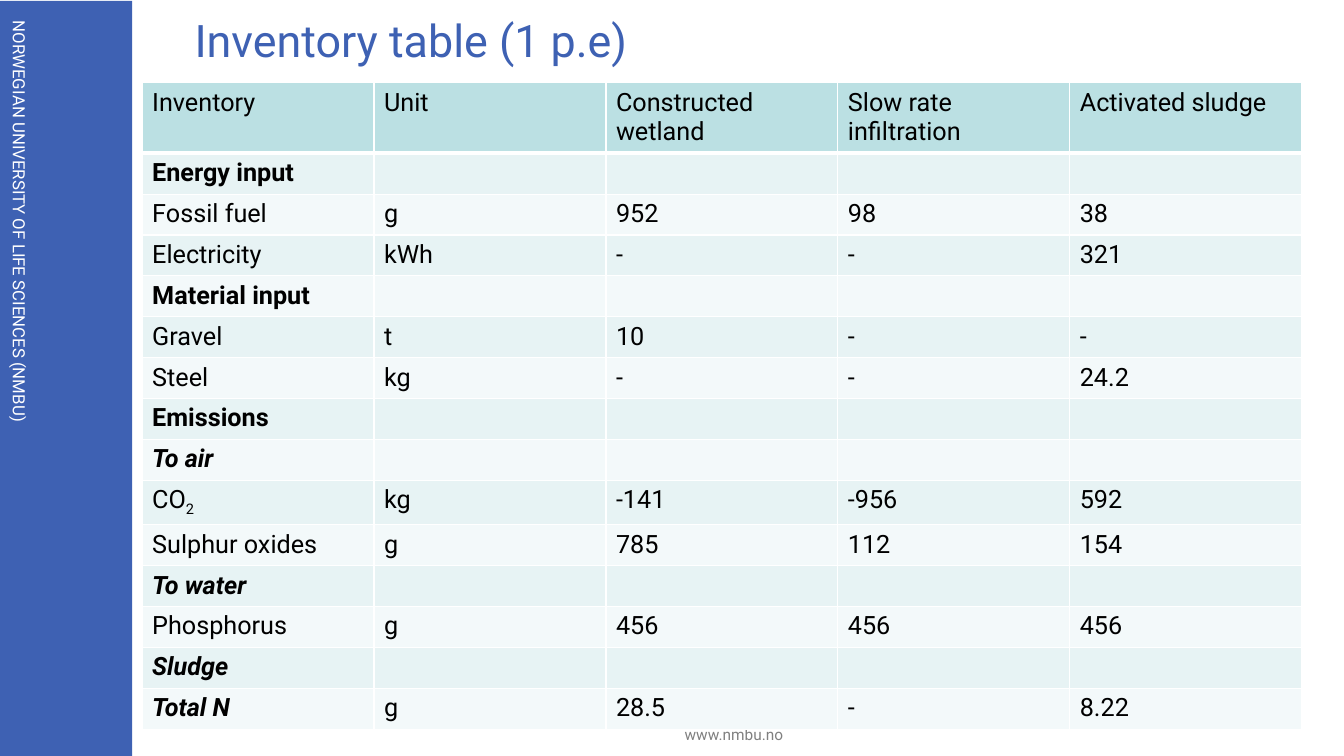
"""Build the inventory table slide."""
from lxml import etree
from pptx import Presentation
from pptx.dml.color import RGBColor
from pptx.enum import shapes, text
from pptx.oxml import ns
from pptx.util import Inches, Pt

FONT = "Roboto"
BLUE, WHITE, GREY, BLACK = "3E61B3", "FFFFFF", "808080", "000000"
HEADER_FILL, BAND_FILLS = "BBE0E3", ("E7F3F4", "F3F9FA")
COLUMN_WIDTH = Inches(2.3)
ROW_HEIGHT = Inches(5.68) // 14
HEADER = ("Inventory", "Unit", "Constructed wetland", "Slow rate infiltration", "Activated sludge")
ROWS = (
    ("Energy input",),
    ("Fossil fuel", "g", "952", "98", "38"),
    ("Electricity", "kWh", "-", "-", "321"),
    ("Material input",),
    ("Gravel", "t", "10", "-", "-"),
    ("Steel", "kg", "-", "-", "24.2"),
    ("Emissions",),
    ("To air",),
    ("CO_2", "kg", "-141", "-956", "592"),
    ("Sulphur oxides", "g", "785", "112", "154"),
    ("To water",),
    ("Phosphorus", "g", "456", "456", "456"),
    ("Sludge",),
    ("Total N", "g", "28.5", "-", "8.22"),
)
BOLD = {"Energy input", "Material input", "Emissions"}
BOLD_ITALIC = {"To air", "To water", "Sludge", "Total N"}


def color(value):
    """Return a colour from a hex string."""
    return RGBColor.from_string(value)


def write(frame, words, size=18, fill=BLACK, bold=False, italic=False, align=text.PP_ALIGN.LEFT):
    """Write formatted text, with what follows an underscore as a subscript."""
    paragraph = frame.paragraphs[0]
    paragraph.alignment = align
    for index, part in enumerate(words.split("_")):
        run = paragraph.add_run()
        run.text = part
        run.font.name = FONT
        run.font.size = Pt(size)
        run.font.bold = bold
        run.font.italic = italic
        run.font.color.rgb = color(fill)
        if index:
            run._r.get_or_add_rPr().set("baseline", "-25000")


def add_title(slide, words):
    """Place and fill the title placeholder."""
    title = slide.shapes.title
    title.left, title.top = Inches(1.83), Inches(0)
    title.width, title.height = Inches(11.5), Inches(0.71)
    frame = title.text_frame
    frame.auto_size = text.MSO_AUTO_SIZE.NONE
    frame.vertical_anchor = text.MSO_ANCHOR.BOTTOM
    write(frame, words, size=32, fill=BLUE)


def add_side_band(slide):
    """Draw the blue band at the left edge."""
    band = slide.shapes.add_shape(
        shapes.MSO_SHAPE.RECTANGLE, Inches(0), Inches(0.01), Inches(1.31), Inches(7.5))
    band.shadow.inherit = False
    band.fill.solid()
    band.fill.fore_color.rgb = color(BLUE)
    band.line.fill.background()


def add_label(slide, words, left, top, width, height, rotation=0, inset=None, **style):
    """Add a text box, optionally rotated and with its own inset."""
    label = slide.shapes.add_textbox(Inches(left), Inches(top), Inches(width), Inches(height))
    label.rotation = rotation
    frame = label.text_frame
    frame.word_wrap = True
    if inset is not None:
        frame.margin_left = frame.margin_right = Inches(inset)
        frame.margin_top = frame.margin_bottom = Inches(inset)
        frame.vertical_anchor = text.MSO_ANCHOR.MIDDLE
    write(frame, words, **style)


def set_borders(cell, bottom=1):
    """Give a cell white borders, 1 point wide except perhaps the bottom."""
    properties = cell._tc.get_or_add_tcPr()
    widths = {"lnL": 1, "lnR": 1, "lnT": 1, "lnB": bottom}
    for index, (side, width) in enumerate(widths.items()):
        line = etree.Element(ns.qn(f"a:{side}"), w=str(Pt(width)))
        solid = etree.SubElement(line, ns.qn("a:solidFill"))
        etree.SubElement(solid, ns.qn("a:srgbClr"), val=WHITE)
        properties.insert(index, line)


def fill_row(table, row, values, fill, bottom=1):
    """Colour one table row and write its values."""
    table.rows[row].height = ROW_HEIGHT
    for column in range(len(HEADER)):
        cell = table.cell(row, column)
        cell.fill.solid()
        cell.fill.fore_color.rgb = color(fill)
        set_borders(cell, bottom)
        if column < len(values):
            words = values[column]
            write(cell.text_frame, words, bold=words in BOLD | BOLD_ITALIC,
                  italic=words in BOLD_ITALIC)


def add_inventory(slide):
    """Add the inventory table with alternating row colours."""
    count = len(ROWS) + 1
    table = slide.shapes.add_table(
        count, len(HEADER), Inches(1.41), Inches(0.82),
        COLUMN_WIDTH * len(HEADER), ROW_HEIGHT * count).table
    for column in table.columns:
        column.width = COLUMN_WIDTH
    fill_row(table, 0, HEADER, HEADER_FILL, bottom=3)
    for index, values in enumerate(ROWS):
        fill_row(table, index + 1, values, BAND_FILLS[index % 2])


def main():
    """Build and save the presentation."""
    presentation = Presentation()
    presentation.slide_width, presentation.slide_height = Inches(13.33), Inches(7.5)
    slide = presentation.slides.add_slide(presentation.slide_layouts[5])
    add_side_band(slide)
    add_label(slide, "NORWEGIAN UNIVERSITY OF LIFE SCIENCES (NMBU)",
              -1.84, 2.14, 4.07, 0.2, rotation=90, inset=0, size=12, fill=WHITE)
    add_label(slide, "www.nmbu.no", 5.89, 7.14, 2.78, 0.29,
              size=11, fill=GREY, align=text.PP_ALIGN.CENTER)
    add_title(slide, "Inventory table (1 p.e)")
    add_inventory(slide)
    presentation.save("out.pptx")


if __name__ == "__main__":
    main()
